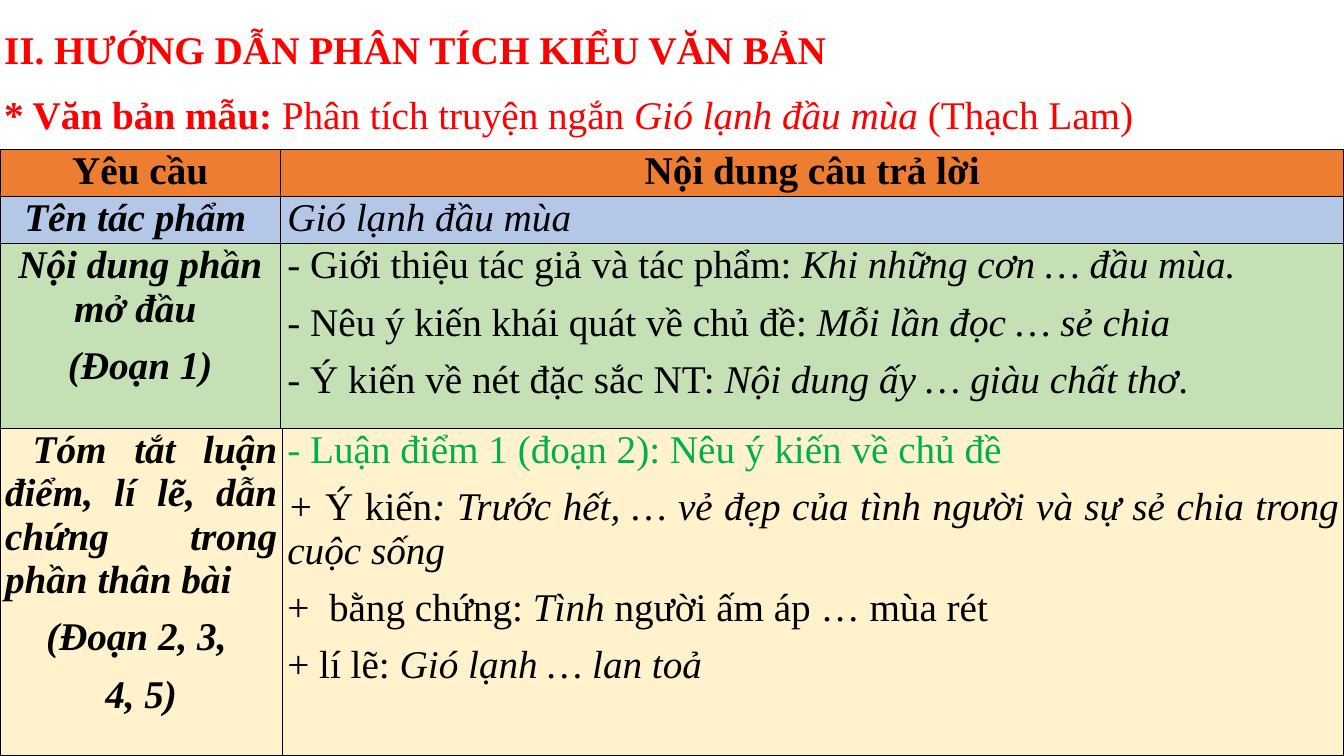
from lxml import etree
from pptx import Presentation
from pptx.dml.color import RGBColor
from pptx.enum.text import MSO_ANCHOR, MSO_AUTO_SIZE, PP_ALIGN
from pptx.oxml.ns import qn
from pptx.util import Inches, Pt

MID, JUST = PP_ALIGN.CENTER, PP_ALIGN.JUSTIFY
TOP, FIXED = MSO_ANCHOR.TOP, MSO_AUTO_SIZE.NONE

RED = RGBColor(0xFF, 0x00, 0x00)
BLACK = RGBColor(0x00, 0x00, 0x00)
GREEN = RGBColor(0x00, 0xB0, 0x50)
ORANGE = RGBColor(0xED, 0x7D, 0x31)
BLUE = RGBColor(0xB4, 0xC7, 0xE7)
LIME = RGBColor(0xC5, 0xE0, 0xB4)
CREAM = RGBColor(0xFF, 0xF2, 0xCC)

WIDE, HIGH = 13.33, 7.5
FONT = {"name": "Times New Roman", "size": Pt(28)}

# Content: a paragraph is (alignment, colour, runs); a run is (text, style)
# where the style holds b for bold and i for italic
HEAD = [
    (JUST, RED, [("II. HƯỚNG DẪN PHÂN TÍCH KIỂU VĂN BẢN", "b")]),
    (JUST, RED, [("* Văn bản mẫu: ", "b"), ("Phân tích truyện ngắn ", ""),
                 ("Gió lạnh đầu mùa ", "i"), ("(Thạch Lam)", "")]),
]

INTRO = [
    (ORANGE, [
        [(MID, BLACK, [("Yêu cầu", "b")])],
        [(MID, BLACK, [("Nội dung câu trả lời", "b")])],
    ]),
    (BLUE, [
        [(MID, BLACK, [("Tên tác phẩm ", "bi")])],
        [(JUST, BLACK, [("Gió lạnh đầu mùa", "i")])],
    ]),
    (LIME, [
        [(MID, BLACK, [("Nội dung phần mở đầu ", "bi")]),
         (MID, BLACK, [("(Đoạn 1)", "bi")])],
        [(JUST, BLACK, [("- Giới thiệu tác giả và tác phẩm: ", ""),
                        ("Khi những cơn … đầu mùa.", "i")]),
         (JUST, BLACK, [("- ", "i"), ("Nêu ý kiến khái quát về chủ đề: ", ""),
                        ("Mỗi lần đọc … sẻ chia", "i")]),
         (JUST, BLACK, [("- Ý kiến về nét đặc sắc NT: ", ""),
                        ("Nội dung ấy … giàu chất thơ", "i"), (".", "")])],
    ]),
]

BODY = [
    (CREAM, [
        [(JUST, BLACK, [(" ", ""),
                        ("Tóm tắt luận điểm, lí lẽ, dẫn chứng trong phần thân bài", "bi")]),
         (MID, BLACK, [("(Đoạn 2, 3, ", "bi")]),
         (MID, BLACK, [("4, 5)", "bi")])],
        [(JUST, GREEN, [("- Luận điểm 1 (đoạn 2): Nêu ý kiến về chủ đề", "")]),
         (JUST, BLACK, [("+ ", "i"), ("Ý kiến", ""),
                        (": Trước hết, … vẻ đẹp của tình người và sự sẻ chia "
                         "trong cuộc sống ", "i")]),
         (JUST, BLACK, [("+  bằng chứng: ", ""), ("Tình ", "i"),
                        ("người ấm áp … mùa rét", "")]),
         (JUST, BLACK, [("+ lí lẽ: ", ""), ("Gió lạnh … lan toả", "i")])],
    ]),
]

# Each table: rows, top, width of first column, row heights, side margin
TABLES = [
    (INTRO, 1.48, 2.78, [0.47, 0.47, 1.88], 0.07),
    (BODY, 4.25, 2.8, [HIGH - 4.25], 0.05),
]


def apply(item, form):
    for key, val in form.items():
        setattr(item, key, val)


def write(frame, paras, space):
    for num, (align, color, runs) in enumerate(paras):
        para = frame.add_paragraph() if num else frame.paragraphs[0]
        apply(para, {"alignment": align, "line_spacing": space,
                     "space_before": Pt(0), "space_after": Pt(10)})
        for text, style in runs:
            run = para.add_run()
            run.text = text
            apply(run.font, {**FONT, "bold": "b" in style, "italic": "i" in style})
            run.font.color.rgb = color


def border(cell):
    props = cell._tc.get_or_add_tcPr()
    for side in ("lnL", "lnR", "lnT", "lnB"):
        line = etree.SubElement(props, qn("a:" + side), w=str(Pt(1)))
        fill = etree.SubElement(line, qn("a:solidFill"))
        etree.SubElement(fill, qn("a:srgbClr"), val=str(BLACK))


def grid(slide, rows, top, first, heights, side):
    widths = [first, WIDE - first]
    table = slide.shapes.add_table(
        len(rows), len(widths), 0, Inches(top),
        Inches(WIDE), Inches(sum(heights))).table
    apply(table, {"first_row": False, "horz_banding": False})
    for col, width in zip(table.columns, widths):
        col.width = Inches(width)
    for row, height, (color, cells) in zip(table.rows, heights, rows):
        row.height = Inches(height)
        for cell, paras in zip(row.cells, cells):
            apply(cell, {"margin_left": Inches(side), "margin_right": Inches(side),
                         "margin_top": 0, "margin_bottom": 0})
            border(cell)
            cell.fill.solid()
            cell.fill.fore_color.rgb = color
            write(cell.text_frame, paras, 1.0)


def main():
    deck = Presentation()
    apply(deck, {"slide_width": Inches(WIDE), "slide_height": Inches(HIGH)})
    slide = deck.slides.add_slide(deck.slide_layouts[5])

    # Heading
    title = slide.shapes.title
    apply(title, {"left": Inches(-0.06), "top": Inches(0.17),
                  "width": Inches(13.45), "height": Inches(1.18)})
    apply(title.text_frame, {"word_wrap": True, "auto_size": FIXED,
                             "vertical_anchor": TOP})
    write(title.text_frame, HEAD, 1.07)

    # Tables
    for data in TABLES:
        grid(slide, *data)

    deck.save("out.pptx")


if __name__ == "__main__":
    main()
